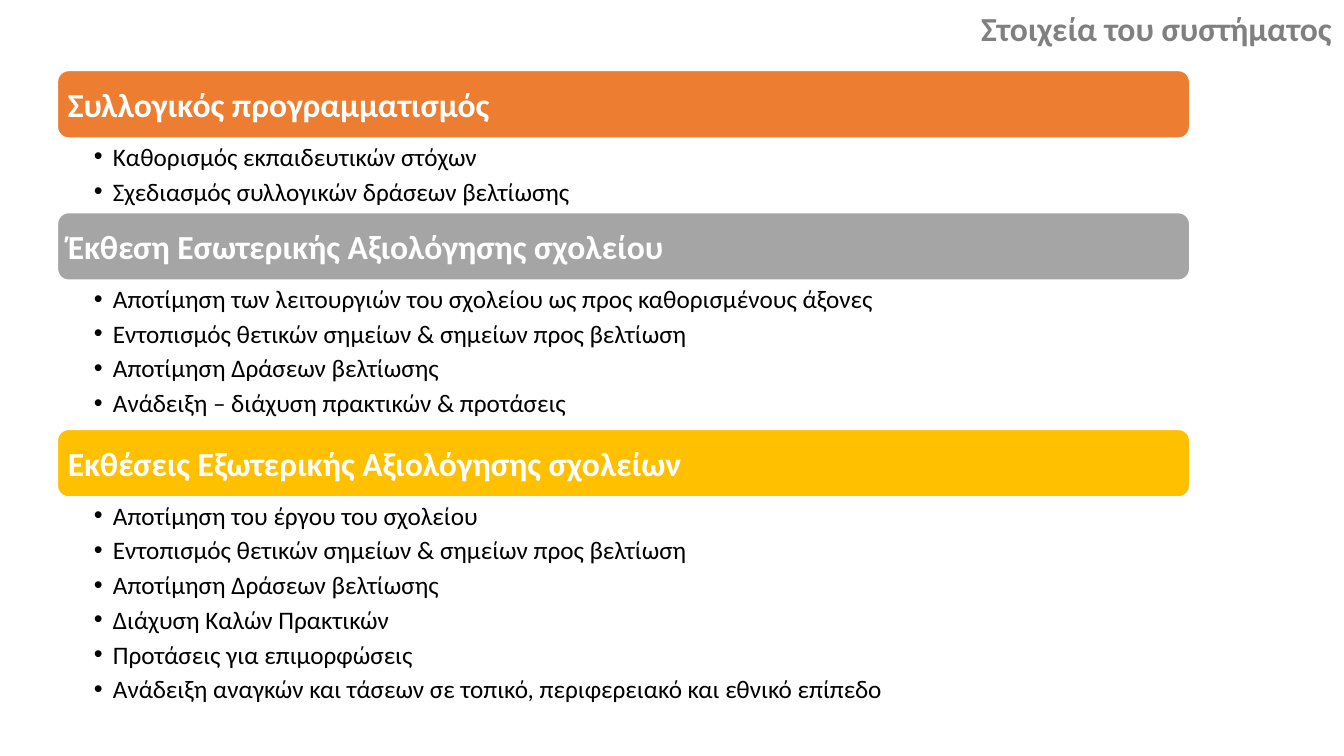
from lxml import etree
from pptx import Presentation
from pptx import util as u
from pptx.dml.color import RGBColor
from pptx.enum import shapes, text
from pptx.oxml.ns import qn

SECTIONS = [
    ("Συλλογικός προγραμματισμός", "ED7D31", [
        "Καθορισμός εκπαιδευτικών στόχων",
        "Σχεδιασμός συλλογικών δράσεων βελτίωσης",
    ]),
    ("Έκθεση Εσωτερικής Αξιολόγησης σχολείου", "A5A5A5", [
        "Αποτίμηση των λειτουργιών του σχολείου ως προς καθορισμένους άξονες",
        "Εντοπισμός θετικών σημείων & σημείων προς βελτίωση",
        "Αποτίμηση Δράσεων βελτίωσης",
        "Ανάδειξη – διάχυση πρακτικών & προτάσεις",
    ]),
    ("Εκθέσεις Εξωτερικής Αξιολόγησης σχολείων", "FFC000", [
        "Αποτίμηση του έργου του σχολείου",
        "Εντοπισμός θετικών σημείων & σημείων προς βελτίωση",
        "Αποτίμηση Δράσεων βελτίωσης",
        "Διάχυση Καλών Πρακτικών",
        "Προτάσεις για επιμορφώσεις",
        "Ανάδειξη αναγκών και τάσεων σε τοπικό, περιφερειακό και εθνικό επίπεδο",
    ]),
]
LEFT, TOP, WIDTH = 0.57, 0.7, 11.23
HEADER_HEIGHT, ITEM_HEIGHT = 0.67, 0.37


def color(value):
    return RGBColor.from_string(value)


class SlideBuilder:
    font = "Calibri"

    def __init__(self, slide):
        self.slide = slide
        self.bodies = [box for box in slide.placeholders
                       if 1 <= box.placeholder_format.idx <= 4]

    def place(self, box, left, top, width, height):
        box.left, box.top = u.Inches(left), u.Inches(top)
        box.width, box.height = u.Inches(width), u.Inches(height)

    def set_text(self, box, words, size, ink, bold, anchor, align, margins):
        frame = box.text_frame
        frame.text = words
        frame.word_wrap = True
        frame.auto_size = text.MSO_AUTO_SIZE.NONE
        frame.vertical_anchor = anchor
        (frame.margin_left, frame.margin_top,
         frame.margin_right, frame.margin_bottom) = map(u.Inches, margins)
        for para in frame.paragraphs:
            para.alignment = align
            para.space_before = u.Pt(0)
            for span in para.runs:
                span.font.name = self.font
                span.font.size = u.Pt(size)
                span.font.bold = bold
                span.font.color.rgb = color(ink)
        return frame.paragraphs

    def title(self, words):
        box = self.slide.shapes.title
        self.place(box, 9.6, 0.15, 3.74, 0.31)
        paras = self.set_text(box, words, 24, "808080", True,
                              text.MSO_ANCHOR.MIDDLE, text.PP_ALIGN.CENTER,
                              (0.1, 0.05, 0.1, 0.05))
        paras[0].line_spacing = 0.9

    def header(self, words, fill, top):
        box = self.slide.shapes.add_shape(
            shapes.MSO_SHAPE.ROUNDED_RECTANGLE, u.Inches(LEFT), u.Inches(top),
            u.Inches(WIDTH), u.Inches(HEADER_HEIGHT))
        box.shadow.inherit = False
        box.fill.solid()
        box.fill.fore_color.rgb = color(fill)
        box.line.color.rgb = color("FFFFFF")
        box.line.width = u.Pt(1)
        self.set_text(box, words, 24, "FFFFFF", True, text.MSO_ANCHOR.MIDDLE,
                      text.PP_ALIGN.LEFT, (0.07, 0.07, 0.07, 0.07))

    def bullets(self, items, top):
        box = self.bodies.pop(0)
        height = ITEM_HEIGHT * len(items)
        self.place(box, LEFT, top, WIDTH, height)
        paras = self.set_text(box, "\n".join(items), 18, "000000", False,
                              text.MSO_ANCHOR.TOP, text.PP_ALIGN.LEFT,
                              (0.36, 0.03, 0.19, 0.03))
        for para in paras:
            para.space_after = u.Pt(3.2)
            properties = para._p.get_or_add_pPr()
            properties.set("marL", str(u.Inches(0.19)))
            properties.set("indent", str(-u.Inches(0.19)))
            etree.SubElement(properties, qn("a:buFont"), typeface="Arial")
            etree.SubElement(properties, qn("a:buChar"), char="•")
        return height

    def remove_empty(self):
        for box in list(self.slide.placeholders):
            if not box.text_frame.text:
                box.element.getparent().remove(box.element)


def main():
    deck = Presentation()
    deck.slide_width, deck.slide_height = u.Inches(13.33), u.Inches(7.5)
    comparison = deck.slide_layouts.get_by_name("Comparison")
    page = SlideBuilder(deck.slides.add_slide(comparison))
    page.title("Στοιχεία του συστήματος")
    top = TOP
    for heading, fill, items in SECTIONS:
        page.header(heading, fill, top)
        top += HEADER_HEIGHT
        top += page.bullets(items, top)
    page.remove_empty()
    deck.save("out.pptx")


if __name__ == "__main__":
    main()
